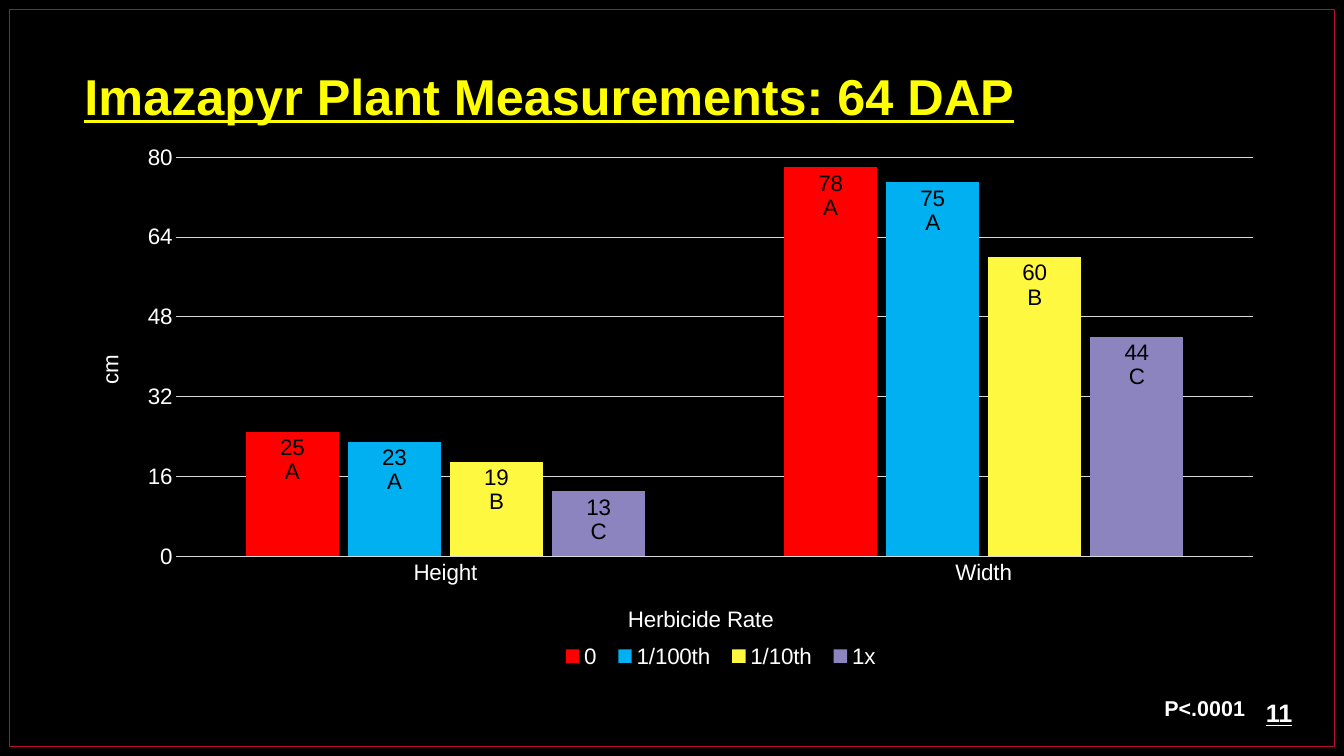
from lxml import etree
from pptx import Presentation
from pptx.chart.data import CategoryChartData
from pptx.dml.color import RGBColor
from pptx.enum.chart import XL_CHART_TYPE, XL_LABEL_POSITION, XL_LEGEND_POSITION, XL_TICK_MARK
from pptx.enum.shapes import MSO_SHAPE
from pptx.enum.text import MSO_ANCHOR, PP_ALIGN
from pptx.oxml.ns import qn
from pptx.util import Pt

COLUMNS = XL_CHART_TYPE.COLUMN_CLUSTERED
INSIDE_END = XL_LABEL_POSITION.INSIDE_END
BOTTOM = XL_LEGEND_POSITION.BOTTOM
NO_TICK = XL_TICK_MARK.NONE
RECT = MSO_SHAPE.RECTANGLE
TOP, MIDDLE = MSO_ANCHOR.TOP, MSO_ANCHOR.MIDDLE
LEFT, RIGHT = PP_ALIGN.LEFT, PP_ALIGN.RIGHT

THEME = {
    "font": "Arial", "back": "000000", "frame": "BA0C2F", "title": "FFFF00",
    "text": "FFFFFF", "label": "000000", "grid": "D9D9D9",
    "title_size": 36, "number_size": 18, "note_size": 15.3, "chart_size": 16,
    "line": 0.75,
}

# text, box (left, top, width, height), size, colour, underline, alignment, anchor, spacing
TEXTS = [
    ("11", (897.1, 494.6, 44.6, 28.8), "number_size", "text", True, LEFT, MIDDLE, 1),
    ("Imazapyr Plant Measurements: 64 DAP", (53.3, 43.2, 859, 53.3),
     "title_size", "title", True, LEFT, TOP, 1),
    ("P<.0001", (540, 496.8, 356.4, 21.6), "note_size", "text", False, RIGHT, TOP, 0.8),
]
FRAME_BOX = (6.5, 6.5, 946.8, 527)
CHART_BOX = (48.2, 96.5, 864, 396)
CATEGORIES = ["Height", "Width"]
# rate, values, significance group, colour
RATES = [
    ("0", (25, 78), "A", "FF0000"),
    ("1/100th", (23, 75), "A", "00B0F0"),
    ("1/10th", (19, 60), "B", "FFF840"),
    ("1x", (13, 44), "C", "8C84BE"),
]
AXIS_TITLES = {"category": "Herbicide Rate", "value": "cm"}
# fractions of the chart area
PLOT_PLACE = {"x": 0.09, "y": 0.04, "w": 0.89, "h": 0.72}
TITLE_PLACES = {"category": {"x": 0.46, "y": 0.84}, "value": {"x": 0.02, "y": 0.39}}
LEGEND_PLACE = {"x": 0.4, "y": 0.91, "w": 0.28, "h": 0.06}


def rgb(key):
    return RGBColor.from_string(THEME.get(key, key))


def points(box):
    return [Pt(v) for v in box]


def style_font(font, size, color, **more):
    values = {"name": THEME["font"], "size": Pt(THEME[size]), "bold": False, **more}
    for name, value in values.items():
        setattr(font, name, value)
    font.color.rgb = rgb(color)


def style_line(line, color):
    line.color.rgb = rgb(color)
    line.width = Pt(THEME["line"])


def place(element, fractions, inner=False):
    """Give a chart part a manual layout."""
    for old in element.findall(qn("c:layout")):
        element.remove(old)
    layout = etree.Element(qn("c:layout"))
    manual = etree.SubElement(layout, qn("c:manualLayout"))
    if inner:
        etree.SubElement(manual, qn("c:layoutTarget"), val="inner")
    for side in "xy":
        etree.SubElement(manual, qn(f"c:{side}Mode"), val="edge")
    for side, value in fractions.items():
        etree.SubElement(manual, qn(f"c:{side}"), val=str(value))
    overlay = element.find(qn("c:overlay"))
    element.insert(0 if overlay is None else element.index(overlay), layout)


def add_text(slide, text, box, size, color, underline, align, anchor, spacing):
    tf = slide.shapes.add_textbox(*points(box)).text_frame
    tf.word_wrap = True
    tf.vertical_anchor = anchor
    p = tf.paragraphs[0]
    p.alignment = align
    p.line_spacing = spacing
    r = p.add_run()
    r.text = text
    style_font(r.font, size, color, bold=True, underline=underline)


def style_axis(axis, name):
    axis.major_tick_mark = axis.minor_tick_mark = NO_TICK
    style_font(axis.tick_labels.font, "chart_size", "text")
    tf = axis.axis_title.text_frame
    tf.text = AXIS_TITLES[name]
    style_font(tf.paragraphs[0].runs[0].font, "chart_size", "text")


def label_points(series, values, group):
    for i, value in enumerate(values):
        label = series.points[i].data_label
        tf = label.text_frame
        tf.text = f"{value}\n{group}"
        for p in tf.paragraphs:
            style_font(p.runs[0].font, "chart_size", "label")
        label.position = INSIDE_END


def add_measurements(slide):
    data = CategoryChartData()
    data.categories = CATEGORIES
    for rate, values, *_ in RATES:
        data.add_series(rate, values)
    chart = slide.shapes.add_chart(COLUMNS, *points(CHART_BOX), data).chart
    chart.has_title = False
    style_font(chart.font, "chart_size", "text")

    plot = chart.plots[0]
    plot.gap_width, plot.overlap, plot.vary_by_categories = 150, -10, False
    for series, (_, values, group, color) in zip(plot.series, RATES):
        series.format.fill.solid()
        series.format.fill.fore_color.rgb = rgb(color)
        label_points(series, values, group)

    style_axis(chart.category_axis, "category")
    style_line(chart.category_axis.format.line, "grid")
    axis = chart.value_axis
    style_axis(axis, "value")
    axis.minimum_scale, axis.maximum_scale, axis.major_unit = 0, 80, 16
    axis.format.line.fill.background()
    style_line(axis.major_gridlines.format.line, "grid")

    chart.has_legend = True
    chart.legend.position = BOTTOM
    chart.legend.include_in_layout = False
    style_font(chart.legend.font, "chart_size", "text")

    root = chart.element
    place(root.find(".//" + qn("c:plotArea")), PLOT_PLACE, inner=True)
    place(root.find(".//" + qn("c:legend")), LEGEND_PLACE)
    for name, tag in (("category", "c:catAx"), ("value", "c:valAx")):
        title = root.find(f".//{qn(tag)}/{qn('c:title')}")
        place(title, TITLE_PLACES[name])
        if name == "value":
            body = title.find(".//" + qn("a:bodyPr"))
            body.set("rot", "-5400000")
            body.set("vert", "horz")


def main():
    prs = Presentation()
    prs.slide_width, prs.slide_height = Pt(960), Pt(540)
    s = prs.slides.add_slide(prs.slide_layouts[6])
    s.background.fill.solid()
    s.background.fill.fore_color.rgb = rgb("back")
    frame = s.shapes.add_shape(RECT, *points(FRAME_BOX))
    frame.shadow.inherit = False
    frame.fill.background()
    style_line(frame.line, "frame")
    for item in TEXTS:
        add_text(s, *item)
    add_measurements(s)
    prs.save("out.pptx")


if __name__ == "__main__":
    main()
